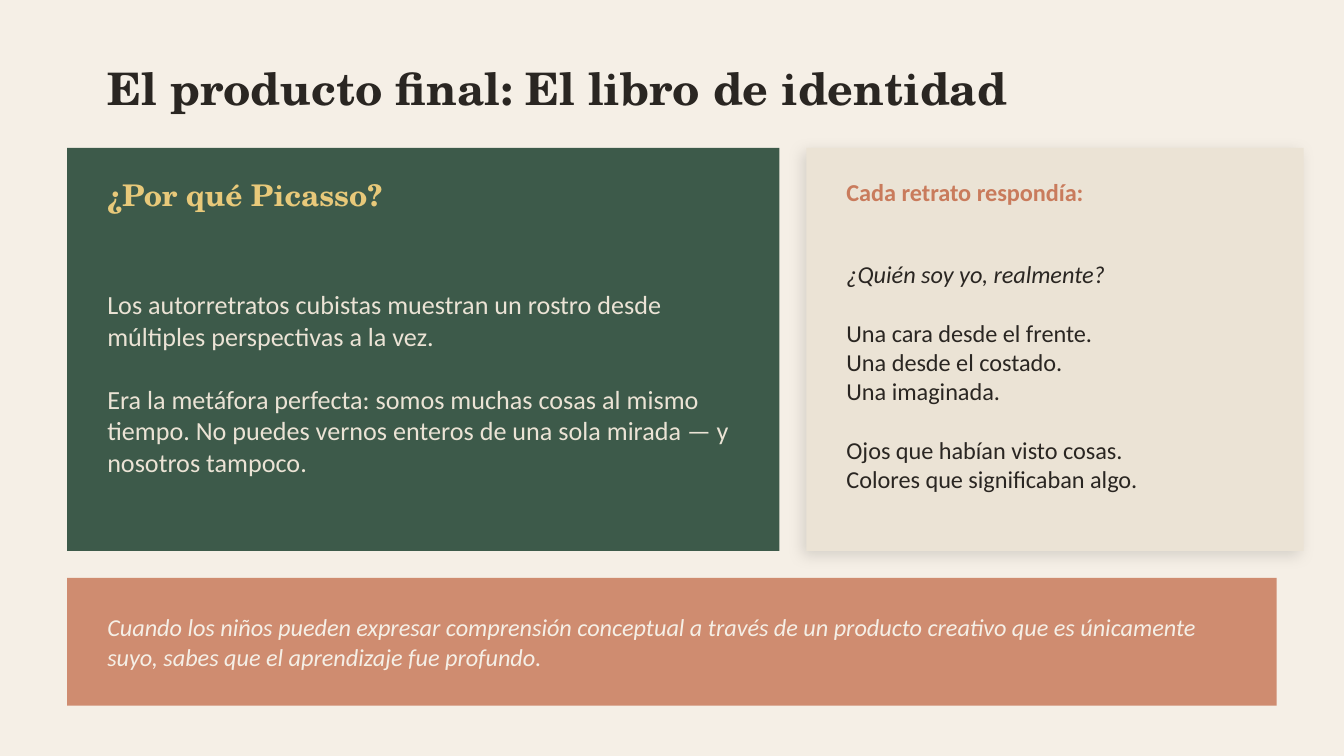
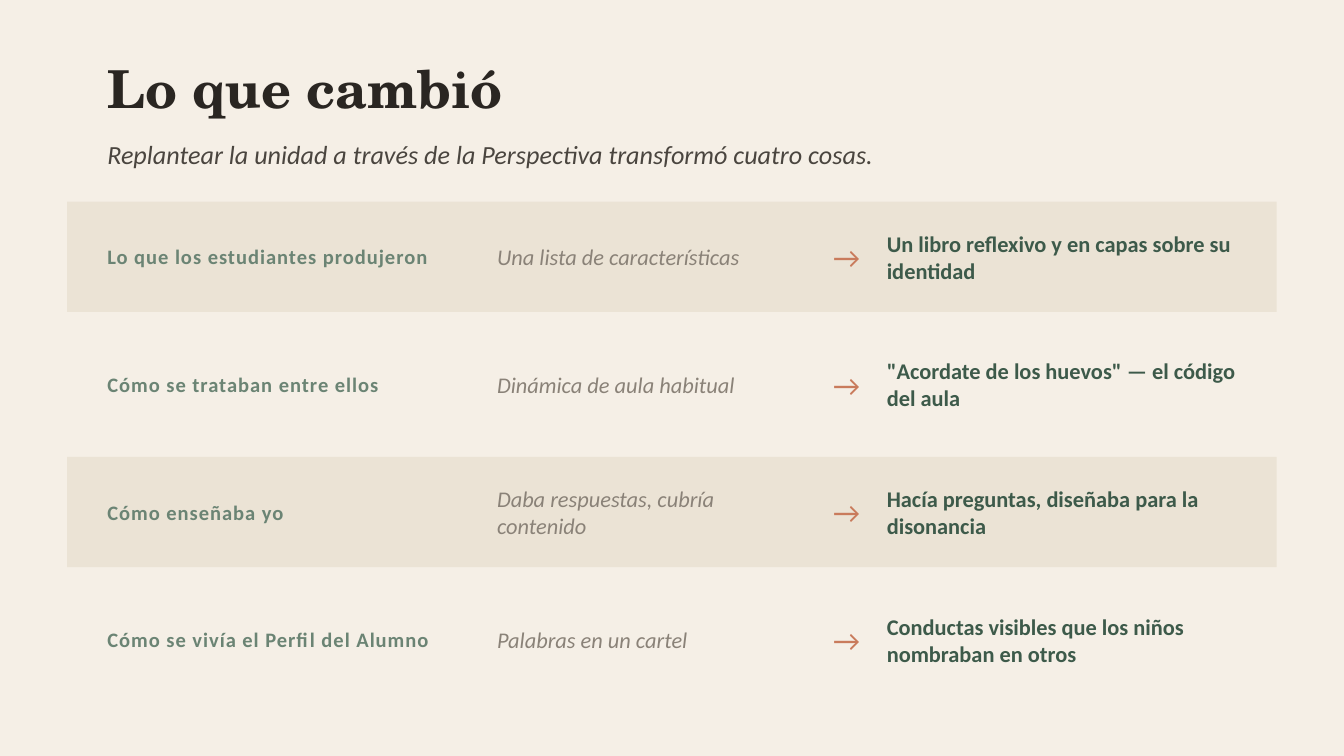
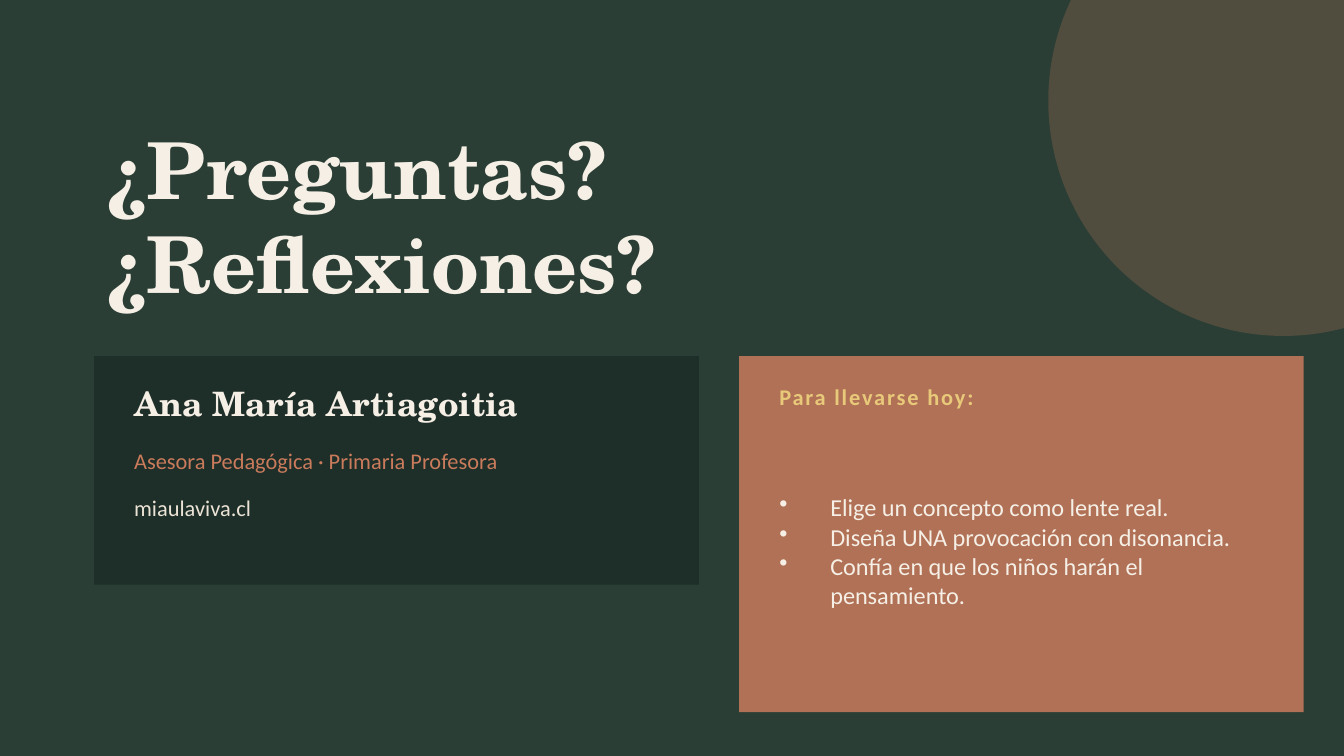
from dataclasses import dataclass, replace
from typing import NamedTuple

from lxml.etree import SubElement
from pptx import Presentation
from pptx.dml.color import RGBColor
from pptx.enum.shapes import MSO_SHAPE
from pptx.enum.text import MSO_ANCHOR, MSO_AUTO_SIZE, PP_ALIGN
from pptx.oxml.ns import qn
from pptx.util import Pt

SERIF, SANS = "TeX Gyre Schola", "Calibri"
CREAM, SAND, INK, BROWN, GREY = "F5EFE6", "EBE3D5", "2A2622", "4A453F", "8A8278"
GREEN, SAGE, FOREST, NIGHT = "3D5A4A", "6B8474", "2A3E35", "1E2E28"
CLAY, GOLD = "C97B5C", "E8C97A"


class Box(NamedTuple):
    left: float
    top: float
    width: float
    height: float


@dataclass(frozen=True)
class Style:
    size: float
    color: str
    font: str = SANS
    bold: bool = False
    italic: bool = False
    spacing: float = 0
    align: PP_ALIGN = PP_ALIGN.LEFT
    bullet: bool = False


@dataclass(frozen=True)
class Para:
    text: str
    before: float = 0
    italic: bool = False


@dataclass(frozen=True)
class Panel:
    box: Box
    color: str
    alpha: int = 100
    kind: MSO_SHAPE = MSO_SHAPE.RECTANGLE
    shadow: bool = False


class Column(NamedTuple):
    left: float
    width: float
    style: Style


class Change(NamedTuple):
    topic: str
    before: str
    after: str


TITLE_BOX = Box(50.4, 25.2, 619.2, 43.2)
TITLE = Style(24, INK, SERIF, bold=True)
NOTE = Style(13, CREAM, italic=True)
COLUMNS = [
    Column(50.4, 201.6, Style(11, SAGE, bold=True, spacing=0.5)),
    Column(259.2, 180, Style(12, GREY, italic=True)),
    Column(439.2, 28.8, Style(16, CLAY, align=PP_ALIGN.CENTER)),
    Column(468, 201.6, Style(12, GREEN, bold=True)),
]
CHANGES = [
    Change("Lo que los estudiantes produjeron", "Una lista de características",
           "Un libro reflexivo y en capas sobre su identidad"),
    Change("Cómo se trataban entre ellos", "Dinámica de aula habitual",
           "\"Acordate de los huevos\" — el código del aula"),
    Change("Cómo enseñaba yo", "Daba respuestas, cubría contenido",
           "Hacía preguntas, diseñaba para la disonancia"),
    Change("Cómo se vivía el Perfil del Alumno", "Palabras en un cartel",
           "Conductas visibles que los niños nombraban en otros"),
]
ROW_TOP, ROW_PITCH, ROW_HEIGHT, ROW_PAD = 108, 68.4, 59.04, 3.6


def rgb(color: str) -> RGBColor:
    return RGBColor.from_string(color)


def points(box: Box) -> list[Pt]:
    return [Pt(v) for v in box]


def add_bullet(p, indent: float) -> None:
    pPr = p._p.get_or_add_pPr()
    pPr.set("marL", str(Pt(indent)))
    pPr.set("indent", str(-Pt(indent)))
    SubElement(pPr, qn("a:buChar"), char="•")


def write(tf, paras: list[Para], style: Style) -> None:
    tf.word_wrap = True
    tf.auto_size = MSO_AUTO_SIZE.NONE
    tf.vertical_anchor = MSO_ANCHOR.MIDDLE
    for i, para in enumerate(paras):
        p = tf.add_paragraph() if i else tf.paragraphs[0]
        p.alignment = style.align
        if para.before:
            p.space_before = Pt(para.before)
        if style.bullet:
            add_bullet(p, 27.36)
        r = p.add_run()
        r.text = para.text
        r.font.name = style.font
        r.font.size = Pt(style.size)
        r.font.bold = style.bold
        r.font.italic = style.italic or para.italic
        r.font.color.rgb = rgb(style.color)
        if style.spacing:
            r._r.get_or_add_rPr().set("spc", str(int(style.spacing * 100)))


def add_text(s, box: Box, style: Style, *paras: Para | str) -> None:
    tf = s.shapes.add_textbox(*points(box)).text_frame
    write(tf, [Para(t) if isinstance(t, str) else t for t in paras], style)


def add_panel(s, panel: Panel) -> None:
    sp = s.shapes.add_shape(panel.kind, *points(panel.box))
    sp.shadow.inherit = False
    sp.line.fill.background()
    sp.fill.solid()
    sp.fill.fore_color.rgb = rgb(panel.color)
    if panel.alpha < 100:
        clr = sp._element.spPr.find(qn("a:solidFill"))[0]
        SubElement(clr, qn("a:alpha"), val=str(panel.alpha * 1000))
    if panel.shadow:
        effects = sp._element.spPr.find(qn("a:effectLst"))
        outer = SubElement(effects, qn("a:outerShdw"), blurRad=str(Pt(8)), dist=str(Pt(3)),
                           dir=str(135 * 60000), algn="bl", rotWithShape="0")
        clr = SubElement(outer, qn("a:srgbClr"), val="000000")
        SubElement(clr, qn("a:alpha"), val="12000")


def new_slide(prs, background: str, style: Style, *title: str, box: Box = TITLE_BOX):
    s = prs.slides.add_slide(prs.slide_layouts[5])
    s.background.fill.solid()
    s.background.fill.fore_color.rgb = rgb(background)
    sp = s.shapes.title
    sp.left, sp.top, sp.width, sp.height = points(box)
    write(sp.text_frame, [Para(t) for t in title], style)
    return s


def build_product(prs) -> None:
    s = new_slide(prs, CREAM, TITLE, "El producto final: El libro de identidad")
    add_panel(s, Panel(Box(36, 79.2, 381.6, 216), GREEN))
    add_text(s, Box(50.4, 86.4, 352.8, 36), Style(16, GOLD, SERIF, bold=True), "¿Por qué Picasso?")
    add_text(s, Box(50.4, 126, 352.8, 158.4), Style(14, SAND),
             "Los autorretratos cubistas muestran un rostro desde múltiples perspectivas a la vez.",
             Para("Era la metáfora perfecta: somos muchas cosas al mismo tiempo. "
                  "No puedes vernos enteros de una sola mirada — y nosotros tampoco.", before=17))
    add_panel(s, Panel(Box(432, 79.2, 266.4, 216), SAND, shadow=True))
    add_text(s, Box(446.4, 86.4, 237.6, 32.4), Style(13, CLAY, bold=True), "Cada retrato respondía:")
    add_text(s, Box(446.4, 122.4, 237.6, 158.4), Style(13, INK),
             Para("¿Quién soy yo, realmente?", italic=True),
             Para("Una cara desde el frente.", before=15.8),
             "Una desde el costado.",
             "Una imaginada.",
             Para("Ojos que habían visto cosas.", before=15.8),
             "Colores que significaban algo.")
    band = Box(36, 309.6, 648, 68.4)
    add_panel(s, Panel(band, CLAY, alpha=85))
    add_text(s, band._replace(left=50.4, width=619.2), NOTE,
             "Cuando los niños pueden expresar comprensión conceptual a través de un producto "
             "creativo que es únicamente suyo, sabes que el aprendizaje fue profundo.")


def build_changes(prs) -> None:
    s = new_slide(prs, CREAM, replace(TITLE, size=28), "Lo que cambió")
    add_text(s, Box(50.4, 68.4, 619.2, 28.8), Style(14, BROWN, italic=True),
             "Replantear la unidad a través de la Perspectiva transformó cuatro cosas.")
    for i, change in enumerate(CHANGES):
        top = ROW_TOP + i * ROW_PITCH
        add_panel(s, Panel(Box(36, top, 648, ROW_HEIGHT), CREAM if i % 2 else SAND))
        cells = (change.topic, change.before, "→", change.after)
        for column, text in zip(COLUMNS, cells):
            box = Box(column.left, top + ROW_PAD, column.width, ROW_HEIGHT - 2 * ROW_PAD)
            add_text(s, box, column.style, text)


def build_closing(prs) -> None:
    s = new_slide(prs, FOREST, replace(TITLE, size=42, color=CREAM),
                  "¿Preguntas?", "¿Reflexiones?", box=Box(50.4, 50.4, 504, 129.6))
    add_panel(s, Panel(Box(561.6, -72, 252, 252), CLAY, alpha=25, kind=MSO_SHAPE.OVAL))
    add_panel(s, Panel(Box(50.4, 190.8, 324, 122.4), NIGHT))
    add_text(s, Box(64.8, 198, 295.2, 36), Style(18, CREAM, SERIF, bold=True),
             "Ana María Artiagoitia")
    add_text(s, Box(64.8, 234, 295.2, 25.2), Style(12, CLAY),
             "Asesora Pedagógica · Primaria Profesora")
    add_text(s, Box(64.8, 259.2, 295.2, 25.2), Style(12, SAND), "miaulaviva.cl")
    add_panel(s, Panel(Box(396, 190.8, 302.4, 190.8), CLAY, alpha=85))
    add_text(s, Box(410.4, 198, 273.6, 28.8), Style(12, GOLD, bold=True, spacing=1),
             "Para llevarse hoy:")
    add_text(s, Box(410.4, 230.4, 273.6, 129.6), Style(13, CREAM, bullet=True),
             "Elige un concepto como lente real.",
             "Diseña UNA provocación con disonancia.",
             "Confía en que los niños harán el pensamiento.")


def main() -> None:
    prs = Presentation()
    prs.slide_width, prs.slide_height = Pt(720), Pt(405)
    build_product(prs)
    build_changes(prs)
    build_closing(prs)
    prs.save("out.pptx")


if __name__ == "__main__":
    main()
